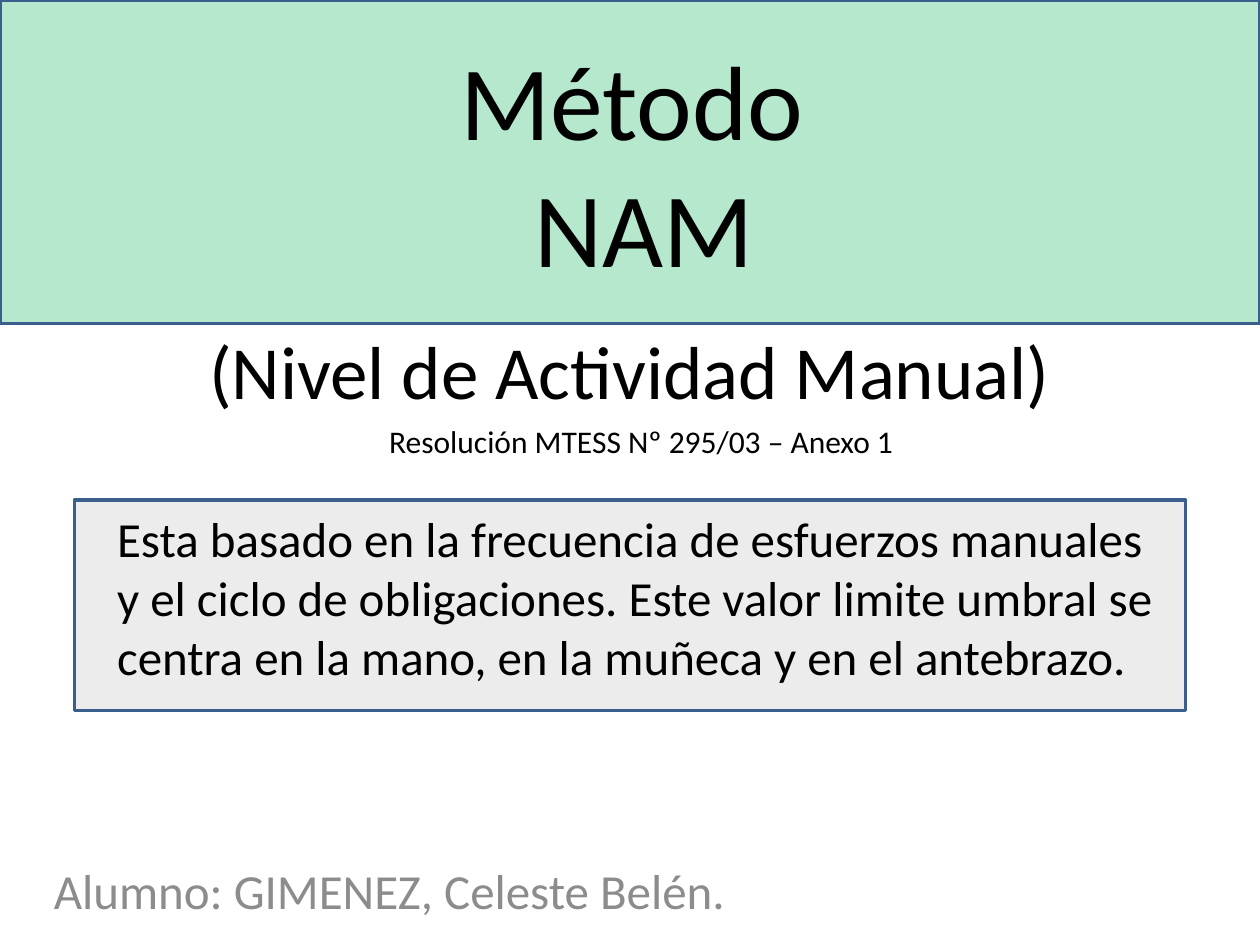
from dataclasses import dataclass

from lxml import etree
from pptx import Presentation
from pptx.dml.color import RGBColor
from pptx.enum import shapes, text
from pptx.oxml import ns
from pptx.util import Pt


@dataclass(frozen=True)
class Theme:
    font: str = "Calibri"
    ink: str = "000000"
    muted: str = "8C8C8C"
    green: str = "00B050"
    grey: str = "BFBFBF"
    border: str = "3A5F8C"
    border_width: float = 2
    panel_opacity: int = 29
    title: float = 60.3
    subtitle: float = 42.9
    body: float = 28
    note: float = 18


THEME = Theme()
CENTER = text.PP_ALIGN.CENTER
LEFT = text.PP_ALIGN.LEFT
TOP = text.MSO_ANCHOR.TOP
MIDDLE = text.MSO_ANCHOR.MIDDLE


def place(shape, box):
    for name, value in zip(("left", "top", "width", "height"), box):
        setattr(shape, name, Pt(value))


def add_panel(s, box, color):
    """Add a bordered rectangle with a translucent fill."""
    panel = s.shapes.add_shape(shapes.MSO_SHAPE.RECTANGLE, *map(Pt, box))
    panel.shadow.inherit = False
    panel.fill.solid()
    panel.fill.fore_color.rgb = RGBColor.from_string(color)
    color_node = panel.fill._xPr.find(".//" + ns.qn("a:srgbClr"))
    alpha = etree.SubElement(color_node, ns.qn("a:alpha"))
    alpha.set("val", str(THEME.panel_opacity * 1000))
    panel.line.color.rgb = RGBColor.from_string(THEME.border)
    panel.line.width = Pt(THEME.border_width)


def write(sp, words, size, color=THEME.ink, align=LEFT, anchor=TOP, wrap=True):
    tf = sp.text_frame
    tf.text = words
    frame_format = {"word_wrap": wrap, "vertical_anchor": anchor,
                    "auto_size": text.MSO_AUTO_SIZE.NONE}
    for name, value in frame_format.items():
        setattr(tf, name, value)
    p = tf.paragraphs[0]
    p.alignment = align
    for r in p.runs:
        for name, value in {"name": THEME.font, "size": Pt(size)}.items():
            setattr(r.font, name, value)
        r.font.color.rgb = RGBColor.from_string(color)


def fill_placeholder(sp, box, words, size, **style):
    place(sp, box)
    write(sp, words, size, align=CENTER, **style)


def add_text(s, box, words, size, **style):
    write(s.shapes.add_textbox(*map(Pt, box)), words, size, **style)


def main():
    prs = Presentation()
    prs.slide_width, prs.slide_height = Pt(720), Pt(540)
    s = prs.slides.add_slide(prs.slide_layouts[0])

    add_panel(s, (42.5, 285.8, 635, 120.2), THEME.grey)
    add_panel(s, (0, 0, 720, 185), THEME.green)
    title, student = s.placeholders
    for sp in (title, student):
        s.shapes._spTree.append(sp._element)  # bring in front of the panels

    fill_placeholder(title, (62, 9.4, 612, 166.3), "Método \vNAM",
                     THEME.title, anchor=MIDDLE)
    fill_placeholder(student, (0.7, 488.2, 443.5, 51.1),
                     "Alumno: GIMENEZ, Celeste Belén.",
                     THEME.body, color=THEME.muted)
    add_text(s, (59.8, 287.3, 617.8, 108.7),
             "Esta basado en la frecuencia de esfuerzos manuales y el ciclo de "
             "obligaciones. Este valor limite umbral se centra en la mano, en la "
             "muñeca y en el antebrazo.", THEME.body)
    add_text(s, (215.3, 237.6, 306, 28.8),
             "Resolución MTESS Nº 295/03 – Anexo 1", THEME.note, wrap=False)
    add_text(s, (74.9, 169.9, 569.5, 82.8), "(Nivel de Actividad Manual)",
             THEME.subtitle, align=CENTER, anchor=MIDDLE)

    prs.save("out.pptx")


if __name__ == "__main__":
    main()
